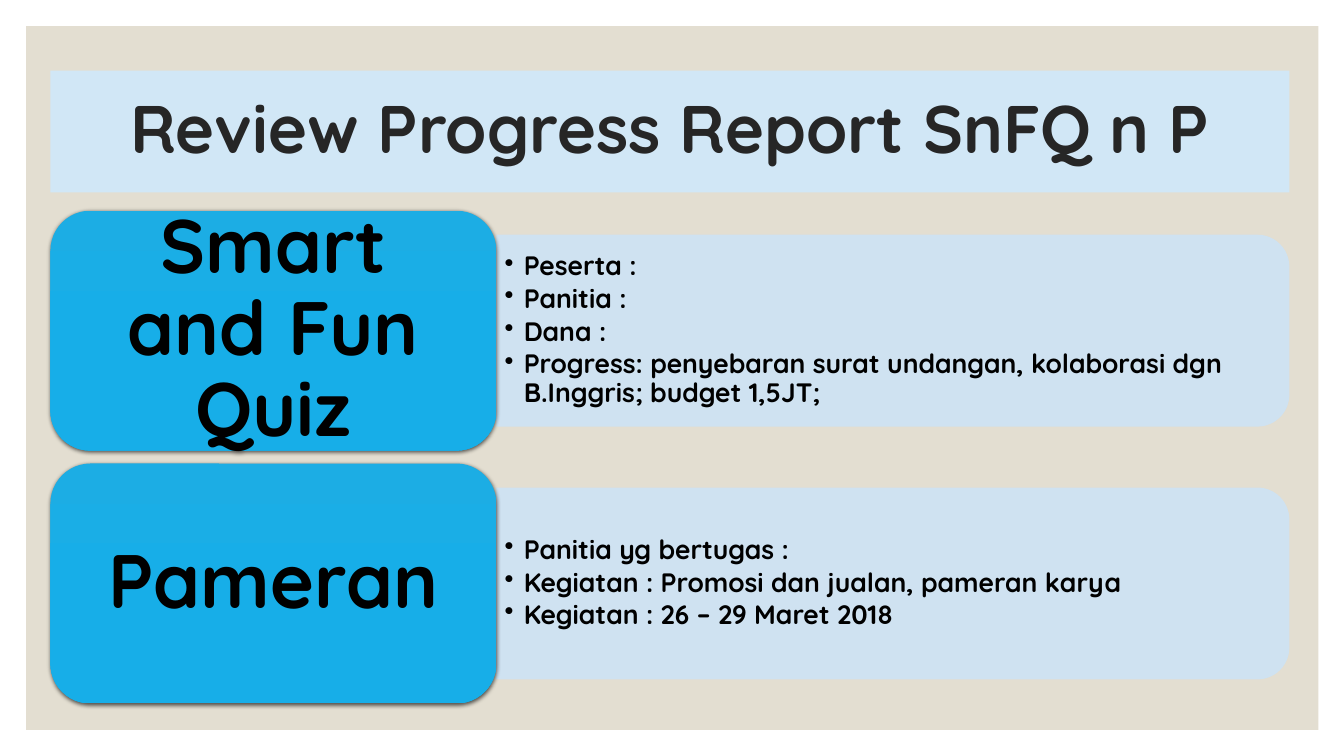
from dataclasses import dataclass

from lxml import etree
from pptx import Presentation
from pptx.dml.color import RGBColor
from pptx.enum.shapes import MSO_SHAPE
from pptx.enum.text import MSO_ANCHOR, PP_ALIGN
from pptx.oxml.ns import qn
from pptx.util import Pt

RECT = MSO_SHAPE.RECTANGLE
ROUND = MSO_SHAPE.ROUNDED_RECTANGLE
CAPPED = MSO_SHAPE.ROUND_2_SAME_RECTANGLE
MIDDLE = MSO_ANCHOR.MIDDLE
LEFT, CENTER = PP_ALIGN.LEFT, PP_ALIGN.CENTER


@dataclass(frozen=True)
class Theme:
    font: str = "Quicksand"
    frame: str = "E3DED1"
    banner: str = "D1E7F6"
    panel: str = "CDE3F5"
    top: str = "1CADE4"
    base: str = "17AEE8"
    title: str = "262626"
    ink: str = "000000"
    title_size: int = 48
    label_size: int = 54
    item_size: int = 19


THEME = Theme()
WIDE, HIGH = 960, 540
FRAME = (18.7, 18.7, 923, 502.6)
TITLE = (36, 50.4, 885, 87)
ROWS = (36, 150.5, 885, 352)
GAP = 9.2
SHARE = 0.36  # part of a row taken by its label

TOPICS = [
    ("Smart and Fun Quiz", [
        "Peserta :",
        "Panitia :",
        "Dana :",
        "Progress: penyebaran surat undangan, kolaborasi dgn "
        "B.Inggris; budget 1,5JT;",
    ]),
    ("Pameran", [
        "Panitia yg bertugas :",
        "Kegiatan : Promosi dan jualan, pameran karya",
        "Kegiatan : 26 – 29 Maret 2018",
    ]),
]


def add_shape(slide, kind, box, color):
    shape = slide.shapes.add_shape(kind, *map(Pt, box))
    shape.shadow.inherit = False
    shape.fill.solid()
    shape.fill.fore_color.rgb = RGBColor.from_string(color)
    shape.line.fill.background()
    return shape


def add_node(parent, tag, **attrs):
    return etree.SubElement(parent, qn(tag), attrs)


def write(shape, lines, size, color, align, pad, after=0):
    frame = shape.text_frame
    frame.word_wrap = True
    frame.vertical_anchor = MIDDLE
    frame.margin_left = frame.margin_right = Pt(pad)
    frame.margin_top = frame.margin_bottom = 0
    for i, line in enumerate(lines):
        para = frame.add_paragraph() if i else frame.paragraphs[0]
        para.text = line
        para.alignment = align
        para.line_spacing = 0.9
        para.space_after = Pt(after)
        para.font.name = THEME.font
        para.font.size = Pt(size)
        para.font.bold = True
        para.font.color.rgb = RGBColor.from_string(color)
    return frame


def add_title(slide, box, text):
    banner = add_shape(slide, RECT, box, THEME.banner)
    write(banner, [text], THEME.title_size, THEME.title, CENTER, 7.2)


def add_panel(slide, box, items):
    x, y, w, h = box
    # Turned a quarter so that the round corners face right
    turned = (x + (w - h) / 2, y + (h - w) / 2, h, w)
    panel = add_shape(slide, CAPPED, turned, THEME.panel)
    panel.rotation = 90
    tint = panel.fill._xPr.find(qn("a:solidFill"))[0]
    add_node(tint, "a:alpha", val="90000")

    # Bulleted text
    note = slide.shapes.add_textbox(Pt(x), Pt(y), Pt(w - 6.7), Pt(h))
    frame = write(note, items, THEME.item_size, THEME.ink, LEFT, 5.8, 2.8)
    for para in frame.paragraphs:
        props = para._p.get_or_add_pPr()
        props.set("marL", str(Pt(13.7)))
        props.set("indent", str(-Pt(13.7)))
        bullet = etree.Element(qn("a:buChar"), char="•")
        props.find(qn("a:defRPr")).addprevious(bullet)


def add_label(slide, box, text):
    label = add_shape(slide, ROUND, box, THEME.base)
    # Vertical gradient that settles halfway down
    label.fill.gradient()
    label.fill.gradient_angle = 270
    stops = label.fill.gradient_stops
    for stop, place, color in zip(stops, (0, 0.5), (THEME.top, THEME.base)):
        stop.position = place
        stop.color.rgb = RGBColor.from_string(color)
    # Soft shadow below
    effects = label._element.spPr.find(qn("a:effectLst"))
    shadow = add_node(effects, "a:outerShdw", blurRad=str(Pt(3)),
                      dist=str(Pt(1)), dir="5400000", rotWithShape="0")
    shade = add_node(shadow, "a:srgbClr", val=THEME.ink)
    add_node(shade, "a:alpha", val="63000")
    write(label, [text], THEME.label_size, THEME.ink, CENTER, 25)


def add_row(slide, box, topic):
    x, y, w, h = box
    name, items = topic
    split = w * SHARE
    add_panel(slide, (x + split, y + h * 0.1, w - split, h * 0.8), items)
    add_label(slide, (x, y, split, h), name)


def add_rows(slide, box, topics):
    x, y, w, h = box
    step = (h + GAP) / len(topics)
    for i, topic in enumerate(topics):
        add_row(slide, (x, y + i * step, w, step - GAP), topic)


def main():
    deck = Presentation()
    deck.slide_width, deck.slide_height = Pt(WIDE), Pt(HIGH)
    slide = deck.slides.add_slide(deck.slide_layouts[6])
    add_shape(slide, RECT, FRAME, THEME.frame)
    add_title(slide, TITLE, "Review Progress Report SnFQ n P")
    add_rows(slide, ROWS, TOPICS)
    deck.save("out.pptx")


if __name__ == "__main__":
    main()
